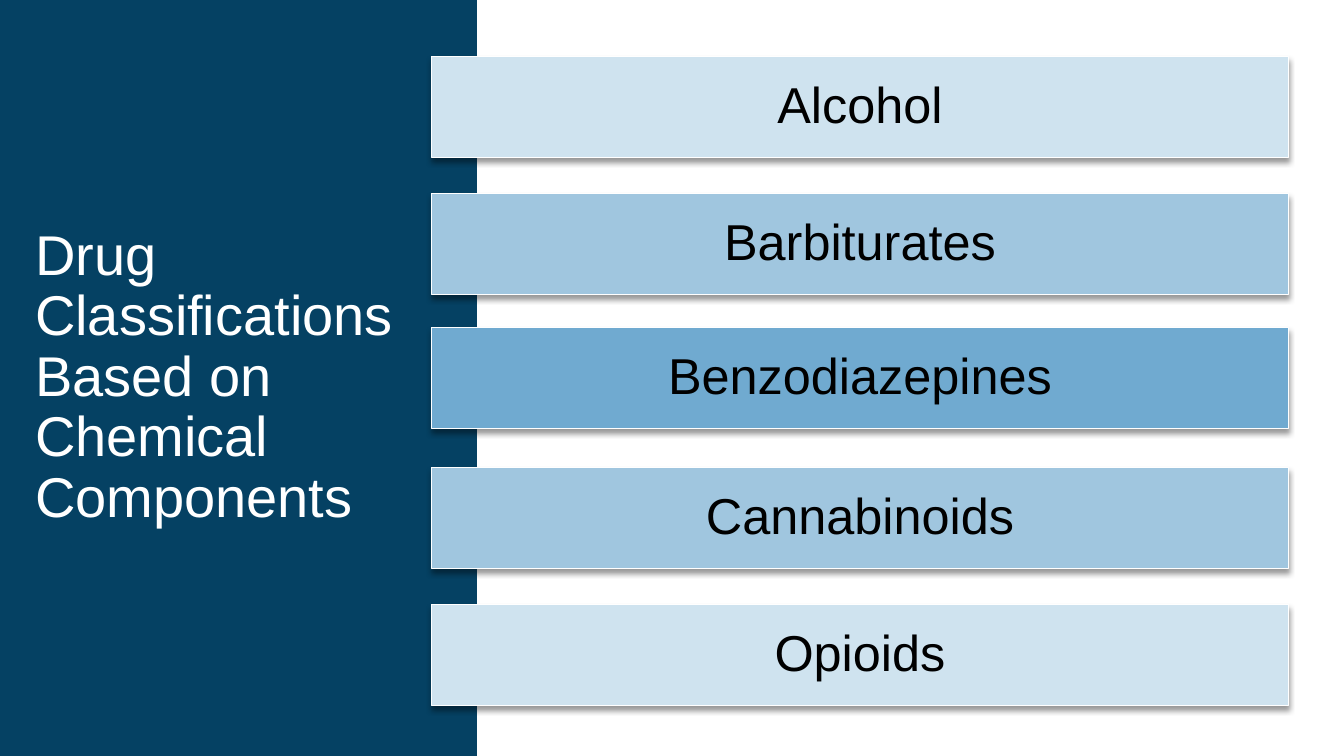
import pptx
import pptx.util
import pptx.dml.color
import pptx.enum.shapes
import pptx.enum.text
import pptx.oxml.ns
from dataclasses import dataclass
from lxml import etree

# Content: drug class, band tint, vertical nudge in inches
TITLE = "Drug Classifications Based on Chemical Components"
DRUG_CLASSES = [
    ("Alcohol", "light", 0),
    ("Barbiturates", "medium", 0),
    ("Benzodiazepines", "strong", -0.03),
    ("Cannabinoids", "medium", 0),
    ("Opioids", "light", 0),
]


@dataclass(frozen=True)
class Theme:
    font: str = "Arial"
    title_size: int = 40
    band_size: int = 36
    panel: str = "054163"
    light: str = "CFE3EF"
    medium: str = "A0C6DF"
    strong: str = "70AAD0"
    white: str = "FFFFFF"
    black: str = "000000"


THEME = Theme()

# Layout in inches
SLIDE_W, SLIDE_H = 13.33, 7.5
PANEL_W = 4.73
BAND_LEFT, BAND_TOP, BAND_W, BAND_H = 4.28, 0.56, 8.5, 1
BAND_PITCH = 1.36
TITLE_INDENT = 0.25


def rgb(colour):
    return pptx.dml.color.RGBColor.from_string(colour)


def add_block(slide, box, fill, text, size, colour, align):
    block = slide.shapes.add_shape(
        pptx.enum.shapes.MSO_SHAPE.RECTANGLE, *map(pptx.util.Inches, box))
    block.fill.solid()
    block.fill.fore_color.rgb = rgb(fill)
    block.line.fill.background()
    block.shadow.inherit = False
    frame = block.text_frame
    frame.word_wrap = True
    frame.vertical_anchor = pptx.enum.text.MSO_ANCHOR.MIDDLE
    paragraph = frame.paragraphs[0]
    paragraph.text = text
    paragraph.alignment = align
    paragraph.line_spacing = 0.9
    paragraph.font.name = THEME.font
    paragraph.font.size = pptx.util.Pt(size)
    paragraph.font.color.rgb = rgb(colour)
    return block


def add_shadow(block):
    qn = pptx.oxml.ns.qn
    effects = block._element.spPr.find(qn("a:effectLst"))
    shadow = etree.SubElement(
        effects, qn("a:outerShdw"), blurRad=str(pptx.util.Pt(4)),
        dist=str(pptx.util.Pt(3)), dir="5400000", algn="t", rotWithShape="0")
    tint = etree.SubElement(shadow, qn("a:srgbClr"), val=THEME.black)
    etree.SubElement(tint, qn("a:alpha"), val="40000")


def main():
    deck = pptx.Presentation()
    deck.slide_width = pptx.util.Inches(SLIDE_W)
    deck.slide_height = pptx.util.Inches(SLIDE_H)
    slide = deck.slides.add_slide(deck.slide_layouts[6])
    align = pptx.enum.text.PP_ALIGN

    # Title panel
    panel = add_block(slide, (0, 0, PANEL_W, SLIDE_H), THEME.panel, TITLE,
                      THEME.title_size, THEME.white, align.LEFT)
    title_props = panel.text_frame.paragraphs[0]._p.get_or_add_pPr()
    title_props.set("marL", str(pptx.util.Inches(TITLE_INDENT)))

    # Drug class bands
    for row, (drug_class, tint, nudge) in enumerate(DRUG_CLASSES):
        top = BAND_TOP + row * BAND_PITCH + nudge
        band = add_block(slide, (BAND_LEFT, top, BAND_W, BAND_H),
                         getattr(THEME, tint), drug_class,
                         THEME.band_size, THEME.black, align.CENTER)
        band.line.color.rgb = rgb(THEME.white)
        band.line.width = pptx.util.Pt(0.75)
        add_shadow(band)

    deck.save("out.pptx")


if __name__ == "__main__":
    main()
